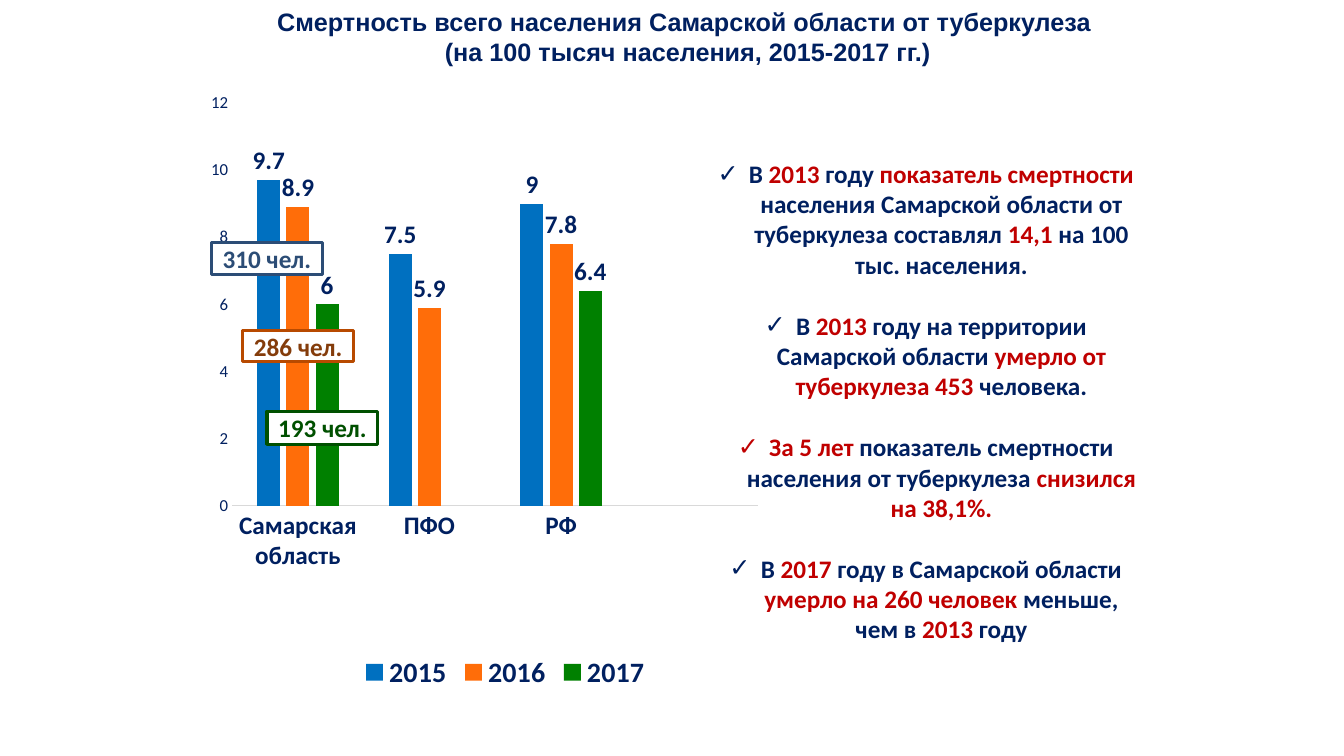
"""Build a slide on tuberculosis mortality in the Samara region."""
from dataclasses import dataclass
import lxml.etree
import pptx
import pptx.chart.chart
import pptx.chart.data
import pptx.dml.color
import pptx.enum.chart
import pptx.enum.shapes
import pptx.enum.text
import pptx.oxml.ns
import pptx.slide
import pptx.text.text
import pptx.util

Cm = pptx.util.Cm
Pt = pptx.util.Pt
qn = pptx.oxml.ns.qn
Anchor = pptx.enum.text.MSO_ANCHOR
Align = pptx.enum.text.PP_ALIGN


@dataclass(frozen=True)
class Theme:
    """Colours, fonts and type sizes."""
    navy: str = "002060"
    red: str = "C00000"
    white: str = "FFFFFF"
    rule: str = "D9D9D9"
    head: str = "Arial"
    body: str = "Calibri"
    small: int = 12
    text: int = 18
    large: int = 20


@dataclass(frozen=True)
class Box:
    """Place and size in centimetres."""
    left: float
    top: float
    width: float
    height: float

    def spans(self) -> tuple:
        """Return the four lengths in order."""
        return Cm(self.left), Cm(self.top), Cm(self.width), Cm(self.height)


@dataclass(frozen=True)
class Tag:
    """A framed head count on the chart."""
    text: str
    box: Box
    line: str
    ink: str


@dataclass(frozen=True)
class Year:
    """One series of the chart."""
    name: str
    rates: tuple
    fill: str


LOOK = Theme()
TITLE = ("Смертность всего населения Самарской области от туберкулеза \v"
         "(на 100 тысяч населения, 2015-2017 гг.)")
AREAS = ("Самарская область", "ПФО", "РФ", "")
YEARS = (
    Year("2015", (9.7, 7.5, 9, None), "0070C0"),
    Year("2016", (8.9, 5.9, 7.8, None), "FF6D09"),
    Year("2017", (6, None, 6.4, None), "008000"),
)
TAGS = (
    Tag("310 чел.", Box(5.33, 6.12, 2.79, 0.79), "2C4D76", "2C4D76"),
    Tag("286 чел.", Box(6.12, 8.33, 2.79, 0.79), "B84A00", "843C0B"),
    Tag("193 чел.", Box(6.73, 10.36, 2.79, 0.84), "005000", "005000"),
)
FACTS = (
    ("В ", "2013", " году ", "показатель смертности ",
     "населения Самарской области от туберкулеза составлял ", "14,1",
     " на 100 тыс. населения."),
    ("В ", "2013", " году на территории Самарской области ",
     "умерло от туберкулеза 453 ", "человека."),
    ("", "За 5 лет ", "показатель смертности населения от туберкулеза ",
     "снизился на 38,1%."),
    ("В ", "2017", " году в Самарской области ", "умерло на 260 человек",
     " меньше, чем в ", "2013", " году"),
)


def tint(code: str) -> pptx.dml.color.RGBColor:
    """Turn a hex code into a colour."""
    return pptx.dml.color.RGBColor.from_string(code)


def style(font: pptx.text.text.Font, size: int, ink: str = LOOK.navy,
          bold: bool = True, face: str = LOOK.body) -> None:
    """Format a font."""
    font.size, font.bold, font.name = Pt(size), bold, face
    font.color.rgb = tint(ink)


def add_title(slide: pptx.slide.Slide) -> None:
    """Place and format the title."""
    title = slide.shapes.title
    title.left, title.top, title.width, title.height = Box(5.33, 0, 24, 2.59).spans()
    frame = title.text_frame
    frame.text = TITLE
    frame.word_wrap = True
    frame.auto_size = pptx.enum.text.MSO_AUTO_SIZE.NONE
    frame.vertical_anchor, frame.margin_top = Anchor.TOP, Cm(0.15)
    line = frame.paragraphs[0]
    line.alignment = Align.CENTER
    for run in line.runs:
        style(run.font, LOOK.text, face=LOOK.head)


def set_plot(chart: pptx.chart.chart.Chart) -> None:
    """Fix the inner plot area as shares of the chart."""
    area = chart.plots[0]._element.getparent()
    for old in area.findall(qn("c:layout")):
        area.remove(old)
    layout = lxml.etree.Element(qn("c:layout"))
    area.insert(0, layout)
    manual = lxml.etree.SubElement(layout, qn("c:manualLayout"))
    parts = (("layoutTarget", "inner"), ("xMode", "edge"), ("yMode", "edge"),
             ("x", "0.09"), ("y", "0.03"), ("w", "0.79"), ("h", "0.66"))
    for name, value in parts:
        lxml.etree.SubElement(manual, qn("c:" + name)).set("val", value)


def add_chart(slide: pptx.slide.Slide) -> None:
    """Draw the clustered columns."""
    kinds = pptx.enum.chart
    data = pptx.chart.data.CategoryChartData()
    data.categories = AREAS
    for year in YEARS:
        data.add_series(year.name, year.rates)
    chart = slide.shapes.add_chart(kinds.XL_CHART_TYPE.COLUMN_CLUSTERED,
                                   *Box(4.34, 2.13, 16.79, 15.39).spans(), data).chart
    chart.has_title = False
    style(chart.font, LOOK.small, bold=False)
    chart.has_legend = True
    chart.legend.position = kinds.XL_LEGEND_POSITION.BOTTOM
    chart.legend.include_in_layout = False
    style(chart.legend.font, LOOK.large)
    plot = chart.plots[0]
    plot.gap_width, plot.overlap, plot.vary_by_categories = 219, -27, False
    for year, series in zip(YEARS, plot.series):
        series.format.fill.solid()
        series.format.fill.fore_color.rgb = tint(year.fill)
        labels = series.data_labels
        labels.show_value = True
        labels.position = kinds.XL_LABEL_POSITION.OUTSIDE_END
        style(labels.font, LOOK.text)
    across, up = chart.category_axis, chart.value_axis
    for axis in (across, up):
        axis.major_tick_mark = axis.minor_tick_mark = kinds.XL_TICK_MARK.NONE
        axis.has_major_gridlines = False
    style(across.tick_labels.font, LOOK.text)
    across.format.line.color.rgb = tint(LOOK.rule)
    across.format.line.width = Pt(0.75)
    style(up.tick_labels.font, LOOK.small, bold=False)
    up.format.line.fill.background()
    up.minimum_scale, up.maximum_scale, up.major_unit = 0, 12, 2
    set_plot(chart)


def add_facts(slide: pptx.slide.Slide) -> None:
    """Write the ticked facts, with every second part in red."""
    frame = slide.shapes.add_textbox(*Box(17.73, 2.59, 11.2, 14.12).spans()).text_frame
    frame.word_wrap = True
    frame.vertical_anchor, frame.margin_top = Anchor.TOP, Cm(1.4)
    for rank, fact in enumerate(FACTS):
        line = frame.add_paragraph() if rank else frame.paragraphs[0]
        line.alignment, line.space_after = Align.CENTER, Pt(22)
        props = line._p.get_or_add_pPr()
        props.set("marL", str(Cm(0.79)))
        props.set("indent", str(-Cm(0.79)))
        lxml.etree.SubElement(props, qn("a:buFont")).set("typeface", LOOK.head)
        lxml.etree.SubElement(props, qn("a:buChar")).set("char", "✓")
        for spot, part in enumerate(fact):
            if part:
                run = line.add_run()
                run.text = part
                style(run.font, LOOK.text, LOOK.red if spot % 2 else LOOK.navy)


def add_tag(slide: pptx.slide.Slide, tag: Tag) -> None:
    """Draw one framed head count."""
    shape = slide.shapes.add_shape(pptx.enum.shapes.MSO_SHAPE.RECTANGLE, *tag.box.spans())
    shape.shadow.inherit = False
    shape.fill.solid()
    shape.fill.fore_color.rgb = tint(LOOK.white)
    shape.line.color.rgb = tint(tag.line)
    shape.line.width = Pt(2.25)
    frame = shape.text_frame
    frame.text = tag.text
    frame.word_wrap = False
    frame.vertical_anchor = Anchor.MIDDLE
    frame.margin_top = frame.margin_bottom = 0
    line = frame.paragraphs[0]
    line.alignment = Align.CENTER
    style(line.runs[0].font, LOOK.text, tag.ink)


def main() -> None:
    """Build and save the deck."""
    deck = pptx.Presentation()
    deck.slide_width, deck.slide_height = Cm(33.87), Cm(19.05)
    slide = deck.slides.add_slide(deck.slide_layouts[5])
    add_title(slide)
    add_chart(slide)
    add_facts(slide)
    for tag in TAGS:
        add_tag(slide, tag)
    deck.save("out.pptx")


if __name__ == "__main__":
    main()
